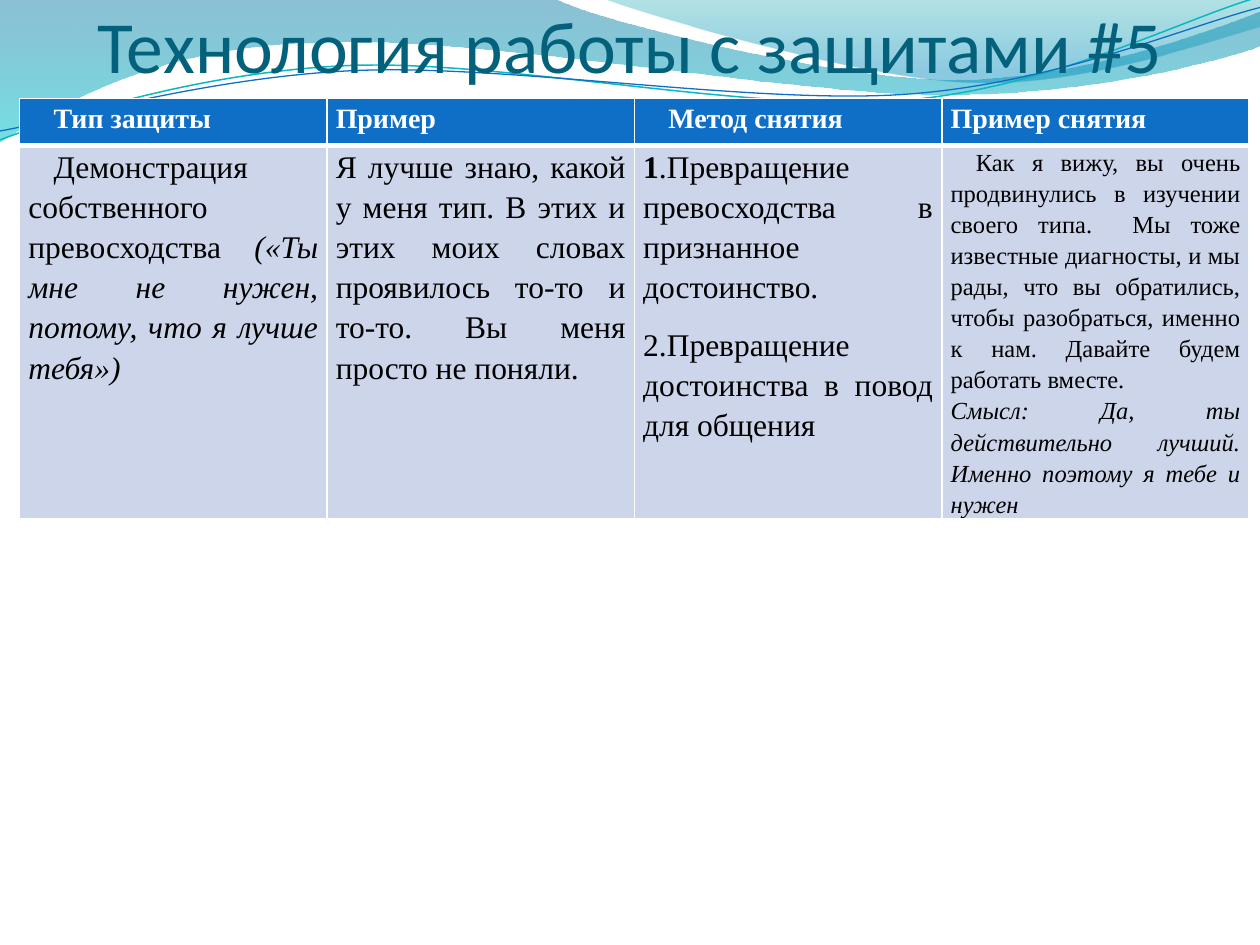
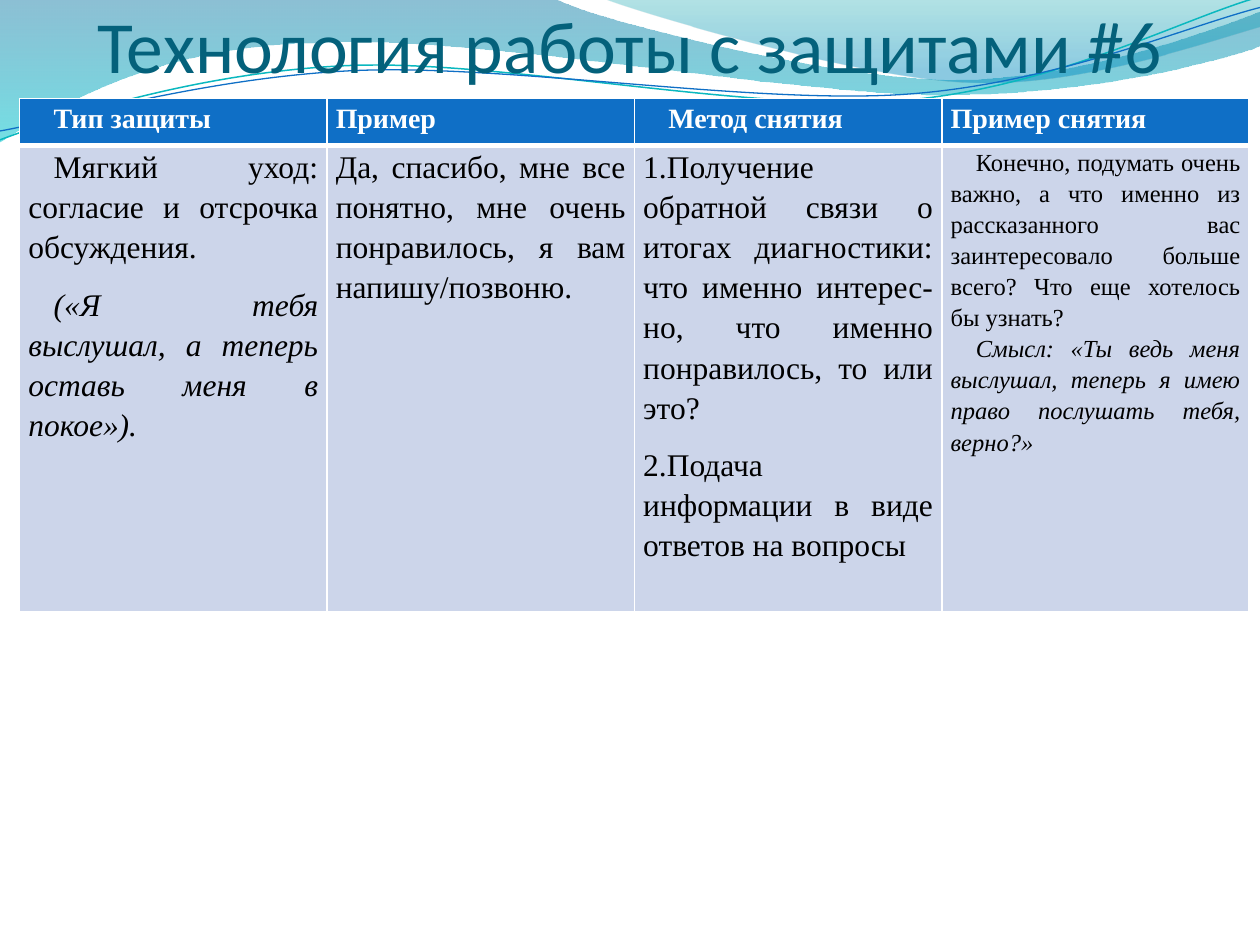
"""Two slides with tables on handling defences, over a shared wave band."""
import math
import lxml.etree
import pptx
import pptx.dml.color
import pptx.enum.text
import pptx.oxml.ns
import pptx.util

COLORS = {
    "title": "04617B", "header": "0F6FC6", "body": "CCD5EA", "white": "FFFFFF", "black": "000000",
    "deep": "0074A1", "aqua": "00C6CF", "teal": "00A1A9", "azure": "008BBF", "thread": "0AB8BF",
}
RGB = {name: pptx.dml.color.RGBColor.from_string(value) for name, value in COLORS.items()}
HEADINGS = [("Тип защиты", True), ("Пример", False), ("Метод снятия", True), ("Пример снятия", False)]
COLUMN_WIDTH = 2.44
HEADER_HEIGHT = 0.37
PLAIN, BOLD, ITALIC = "plain", "bold", "italic"
SLIDES = [
    ("Технология работы с защитами #5", 2.33, 3.59, [
        [(True, [("Демонстрация собственного превосходства ", PLAIN),
                 ("(«Ты мне не нужен, потому, что я лучше тебя»)", ITALIC)])],
        [(False, [("Я лучше знаю, какой у меня тип. В этих и этих моих словах проявилось "
                   "то-то и то-то. Вы меня просто не поняли.", PLAIN)])],
        [(False, [("1", BOLD), (".Превращение превосходства в признанное достоинство. ", PLAIN)]),
         (False, [("2.Превращение достоинства в повод для общения", PLAIN)])],
        [(True, [("Как я вижу, вы очень продвинулись в изучении своего типа.  Мы тоже известные "
                  "диагносты, и мы рады, что вы обратились, чтобы разобраться, именно к нам. "
                  "Давайте будем работать вместе.", PLAIN)]),
         (False, [("Смысл: Да, ты действительно лучший. Именно поэтому я тебе и нужен", ITALIC)])],
    ]),
    ("Технология работы с защитами #6", 3.7, 4.07, [
        [(True, [("Мягкий уход: согласие и отсрочка обсуждения.", PLAIN)]),
         (True, [("(«Я тебя выслушал, а теперь оставь меня в покое»).", ITALIC)])],
        [(False, [("Да, спасибо, мне все понятно, мне очень понравилось, я вам "
                   "напишу/позвоню.", PLAIN)])],
        [(False, [("1.Получение обратной связи о итогах диагностики: что именно интерес-но, "
                   "что именно понравилось, то или это? ", PLAIN)]),
         (False, [("2.Подача информации в виде ответов на вопросы", PLAIN)])],
        [(True, [("Конечно, подумать очень важно, а что именно из рассказанного вас "
                  "заинтересовало больше всего? Что еще хотелось бы узнать?", PLAIN)]),
         (True, [("Смысл: «Ты ведь меня выслушал, теперь я имею право послушать тебя, "
                  "верно?»", ITALIC)])],
    ]),
]
THREAD_ROTATION = 357.3
WAVES = [
    {"stops": [(0, "deep", 45), (1, "aqua", 55)], "path": [
        (0, -0.01), (4.4, -0.01), (4.76, 0.17, 6.64, 0.63, 7.58, 0.63),
        (8.53, 0.63, 9.58, 0.26, 10, 0.09), (10.01, 0.36), (9.83, 0.44, 8.7, 0.76, 7.46, 0.75),
        (6.22, 0.75, 3.82, 0.28, 2.57, 0.34), (1.29, 0.35, 0.46, 0.83, -0.01, 1.13), (0, -0.01)]},
    {"stops": [(0, "teal", 30), (0.8, "azure", 45)], "path": [
        (4.79, -0.01), (5.09, 0.11, 6.82, 0.62, 7.69, 0.65),
        (8.56, 0.69, 9.61, 0.32, 10, 0.21), (10, 0), (4.79, -0.01)]},
    {"line": ("thread", 0.85), "center": (4.99, 0.58), "path": [
        (0, 1.11), (0.48, 0.93, 1.58, 0.57, 2.77, 0.52),
        (3.95, 0.47, 5.93, 0.89, 7.13, 0.8), (8.33, 0.71, 9.38, 0.15, 9.98, -0.02)]},
    {"line": ("header", 0.75), "center": (5, 0.59), "path": [
        (0, 1.04), (0.47, 0.96, 1.64, 0.61, 2.83, 0.56),
        (4.03, 0.51, 5.97, 0.83, 7.17, 0.75), (8.36, 0.67, 9.41, 0.21, 10, 0.06)]},
]


def add_wave(shapes, segments, center, rotation):
    """Draw a freeform of straight and cubic segments, turned about its center."""
    angle = math.radians(-rotation)
    points = []
    for segment in segments:
        for x, y in zip(segment[::2], segment[1::2]):
            across, down = x - center[0], y - center[1]
            points.append((
                pptx.util.Inches(center[0] + across * math.cos(angle) - down * math.sin(angle)),
                pptx.util.Inches(center[1] + across * math.sin(angle) + down * math.cos(angle))))
    builder = shapes.build_freeform(*points[0])
    builder.add_line_segments(points[1:], close=segments[0] == segments[-1])
    shape = builder.convert_to_shape()
    shape.rotation = rotation
    shape.shadow.inherit = False
    steps = iter(list(shape.element.iter(pptx.oxml.ns.qn("a:lnTo"))))
    for segment in segments[1:]:
        step = next(steps)
        if len(segment) == 6:
            curve = lxml.etree.Element(pptx.oxml.ns.qn("a:cubicBezTo"))
            step.addprevious(curve)
            for corner in (step, next(steps), next(steps)):
                curve.append(corner[0])
                corner.getparent().remove(corner)
    return shape


def fill_cell(cell, paragraphs, size, color, space_after, row):
    """Write, frame and fill one table cell."""
    cell.margin_left = cell.margin_right = pptx.util.Inches(0.07)
    cell.margin_top = cell.margin_bottom = 0
    for index, (indented, runs) in enumerate(paragraphs):
        paragraph = cell.text_frame.paragraphs[0] if index == 0 else cell.text_frame.add_paragraph()
        paragraph.alignment = pptx.enum.text.PP_ALIGN.JUSTIFY
        paragraph.line_spacing = 1.15
        paragraph.space_after = pptx.util.Pt(space_after)
        if indented:
            paragraph._p.get_or_add_pPr().set("indent", str(pptx.util.Inches(0.2)))
        for text, style in runs:
            run = paragraph.add_run()
            run.text = text
            run.font.name = "Times New Roman"
            run.font.size = pptx.util.Pt(size)
            run.font.bold = style == BOLD
            run.font.italic = style == ITALIC
            run.font.color.rgb = RGB[color]
    properties = cell._tc.get_or_add_tcPr()
    for side in "LRTB":
        width = 3 if (row, side) in ((0, "B"), (1, "T")) else 1
        border = lxml.etree.SubElement(properties, pptx.oxml.ns.qn(f"a:ln{side}"), w=str(pptx.util.Pt(width)))
        solid = lxml.etree.SubElement(border, pptx.oxml.ns.qn("a:solidFill"))
        lxml.etree.SubElement(solid, pptx.oxml.ns.qn("a:srgbClr"), val=COLORS["white"])
    cell.fill.solid()
    cell.fill.fore_color.rgb = RGB["header" if row == 0 else "body"]


presentation = pptx.Presentation()
presentation.slide_width = pptx.util.Inches(10)
presentation.slide_height = pptx.util.Inches(7.5)
layout = presentation.slide_layouts.get_by_name("Title Only")
layout.background.fill.solid()
layout.background.fill.fore_color.rgb = RGB["white"]

layout_title, *footers = layout.placeholders
for footer in footers:
    layout.shapes.element.remove(footer.element)
layout_title.left = layout_title.top = 0
layout_title.width = presentation.slide_width
layout_title.height = pptx.util.Inches(0.7)
layout_title.text_frame.vertical_anchor = pptx.enum.text.MSO_ANCHOR.BOTTOM
layout_title.text_frame.auto_size = pptx.enum.text.MSO_AUTO_SIZE.NONE
layout_title.text_frame.margin_left = layout_title.text_frame.margin_right = 0
layout_title.text_frame.margin_top = pptx.util.Inches(0.05)
layout_title.text_frame.margin_bottom = 0

slides = [presentation.slides.add_slide(layout) for _ in SLIDES]

for position, wave in enumerate(WAVES):
    rotation = THREAD_ROTATION if "line" in wave else 0
    shape = add_wave(slides[0].shapes, wave["path"], wave.get("center", (0, 0)), rotation)
    if "stops" in wave:
        shape.line.fill.background()
        shape.fill.gradient()
        shape.fill.gradient_angle = 270
        for stop, (place, color, _) in zip(shape.fill.gradient_stops, wave["stops"]):
            stop.position = place
            stop.color.rgb = RGB[color]
        for node, (_, _, opacity) in zip(shape.element.iter(pptx.oxml.ns.qn("a:srgbClr")), wave["stops"]):
            lxml.etree.SubElement(node, pptx.oxml.ns.qn("a:alpha"), val=str(opacity * 1000))
    else:
        color, width = wave["line"]
        shape.fill.background()
        shape.line.color.rgb = RGB[color]
        shape.line.width = pptx.util.Pt(width)
    layout.shapes.element.insert(2 + position, shape.element)

for slide, (title, body_height, frame_height, body_cells) in zip(slides, SLIDES):
    slide.shapes.title.text_frame.text = title
    paragraph = slide.shapes.title.text_frame.paragraphs[0]
    paragraph.alignment = pptx.enum.text.PP_ALIGN.CENTER
    font = paragraph.runs[0].font
    font.name = "Calibri"
    font.size = pptx.util.Pt(42)
    font.color.rgb = RGB["title"]

    frame = slide.shapes.add_table(
        2, len(HEADINGS), pptx.util.Pt(11.2), pptx.util.Pt(56.4),
        pptx.util.Inches(COLUMN_WIDTH * len(HEADINGS)), pptx.util.Inches(frame_height))
    table = frame.table
    for row, height in zip(table.rows, (HEADER_HEIGHT, body_height)):
        row.height = pptx.util.Inches(height)
    frame.height = pptx.util.Inches(frame_height)
    for column, ((heading, indented), paragraphs) in enumerate(zip(HEADINGS, body_cells)):
        is_last = column == len(HEADINGS) - 1
        fill_cell(table.cell(0, column), [(indented, [(heading, BOLD)])], 16, "white", 10, 0)
        fill_cell(table.cell(1, column), paragraphs, 14 if is_last else 18, "black", 0 if is_last else 10, 1)

presentation.save("out.pptx")
